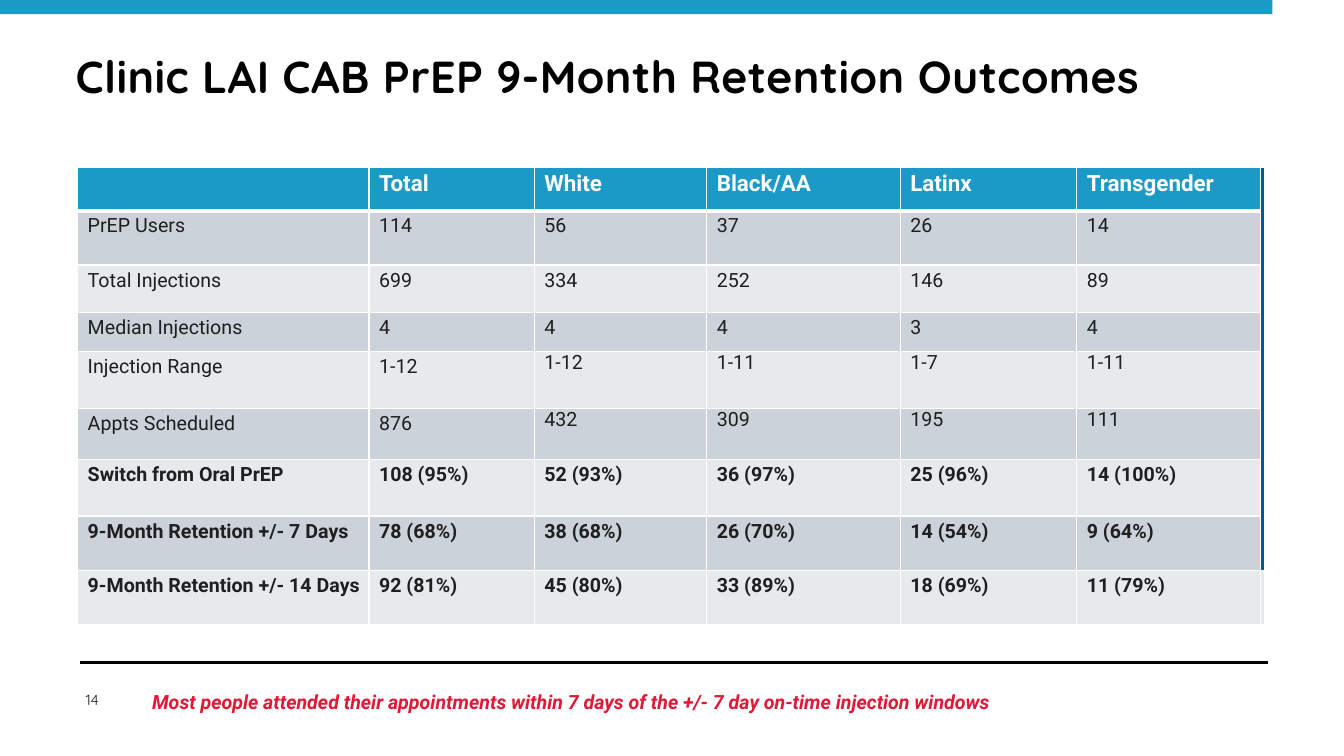
"""Build the nine-month retention outcomes slide."""
from dataclasses import dataclass

from lxml import etree
from pptx import Presentation
from pptx.dml.color import RGBColor
from pptx.enum.shapes import MSO_CONNECTOR, MSO_SHAPE
from pptx.enum.text import MSO_ANCHOR, PP_ALIGN
from pptx.oxml.ns import qn
from pptx.util import Inches, Pt

RECTANGLE = MSO_SHAPE.RECTANGLE
STRAIGHT = MSO_CONNECTOR.STRAIGHT
TOP, MIDDLE = MSO_ANCHOR.TOP, MSO_ANCHOR.MIDDLE
LEFT, CENTER = PP_ALIGN.LEFT, PP_ALIGN.CENTER


@dataclass(frozen=True)
class Theme:
    """Colours, fonts and type sizes of the slide."""

    bar: str = "1A9AC7"
    header: str = "1B9AC7"
    edge: str = "005C84"
    bands: tuple = ("CCD2D9", "E7EAED")
    white: str = "FFFFFF"
    black: str = "000000"
    text: str = "1F1F1F"
    accent: str = "E31836"
    heading_font: str = "Quicksand"
    body_font: str = "Roboto"
    title_size: float = 32
    header_size: float = 16
    body_size: float = 14
    number_size: float = 10.5


THEME = Theme()
COLUMN_WIDTHS = (2.89, 1.64, 1.71, 1.92, 1.75, 1.82, 0.03)
ROW_HEIGHTS = (0.43, 0.54, 0.47, 0.39, 0.56, 0.51, 0.56, 0.54, 0.54)
OUTCOMES = (
    ("", "Total", "White", "Black/AA", "Latinx", "Transgender"),
    ("PrEP Users", "114", "56", "37", "26", "14"),
    ("Total Injections", "699", "334", "252", "146", "89"),
    ("Median Injections", "4", "4", "4", "3", "4"),
    ("Injection Range", "1-12", "1-12", "1-11", "1-7", "1-11"),
    ("Appts Scheduled", "876", "432", "309", "195", "111"),
    ("Switch from Oral PrEP", "108 (95%)", "52 (93%)", "36 (97%)",
     "25 (96%)", "14 (100%)"),
    ("9-Month Retention +/- 7 Days", "78 (68%)", "38 (68%)", "26 (70%)",
     "14 (54%)", "9 (64%)"),
    ("9-Month Retention +/- 14 Days", "92 (81%)", "45 (80%)", "33 (89%)",
     "18 (69%)", "11 (79%)"),
)
RAISED_ROWS = (4, 5)
FIRST_RAISED_COLUMN = 2
FIRST_BOLD_ROW = 6


def set_attributes(target, values):
    """Set each named value on the target."""
    for name, value in values.items():
        setattr(target, name, value)


def set_margins(target, margins):
    """Set left, top, right and bottom margins in inches."""
    sides = ("left", "top", "right", "bottom")
    set_attributes(target, {f"margin_{side}": Inches(margin)
                            for side, margin in zip(sides, margins)})


def write_text(frame, text, size, color, font_name, tracking=0, **formats):
    """Write one formatted run into a text frame."""
    run = frame.paragraphs[0].add_run()
    run.text = text
    set_attributes(run.font, {"size": Pt(size), "name": font_name, **formats})
    run.font.color.rgb = RGBColor.from_string(color)
    if tracking:
        run.font._element.set("spc", str(round(tracking * 100)))


def add_label(slide, box, margins, text, size, color, font_name,
              anchor=TOP, align=LEFT, wrap=True, **formats):
    """Add a text box with one line of text."""
    frame = slide.shapes.add_textbox(*map(Inches, box)).text_frame
    set_margins(frame, margins)
    set_attributes(frame, {"word_wrap": wrap, "vertical_anchor": anchor})
    write_text(frame, text, size, color, font_name, **formats)
    frame.paragraphs[0].alignment = align


def add_bar(slide, box, color):
    """Add a plain filled rectangle."""
    shape = slide.shapes.add_shape(RECTANGLE, *map(Inches, box))
    shape.shadow.inherit = False
    shape.fill.solid()
    shape.fill.fore_color.rgb = RGBColor.from_string(color)
    shape.line.fill.background()


def add_rule(slide, left, right, top, color, width):
    """Add a horizontal line."""
    rule = slide.shapes.add_connector(
        STRAIGHT, Inches(left), Inches(top), Inches(right), Inches(top))
    rule.line.color.rgb = RGBColor.from_string(color)
    rule.line.width = Pt(width)
    etree.SubElement(rule._element.spPr, qn("a:effectLst"))


def style_cell(cell, fill, bottom_width):
    """Give a cell white borders and a solid fill."""
    properties = cell._tc.get_or_add_tcPr()
    widths = {"L": 1, "R": 1, "T": 1, "B": bottom_width}
    for side, width in widths.items():
        border = etree.SubElement(properties, qn(f"a:ln{side}"), w=str(Pt(width)))
        solid = etree.SubElement(border, qn("a:solidFill"))
        etree.SubElement(solid, qn("a:srgbClr"), val=THEME.white)
    cell.fill.solid()
    cell.fill.fore_color.rgb = RGBColor.from_string(fill)


def fill_cell(cell, text, row, column):
    """Style one cell and write its text."""
    is_header = row == 0
    is_raised = row in RAISED_ROWS and column >= FIRST_RAISED_COLUMN
    fill = THEME.header if is_header else THEME.bands[(row - 1) % 2]
    style_cell(cell, fill, 3 if is_header else 1)
    set_margins(cell, (0.1, 0 if is_raised else 0.04, 0, 0))
    if text:
        write_text(cell.text_frame, text,
                   THEME.header_size if is_header else THEME.body_size,
                   THEME.white if is_header else THEME.text,
                   THEME.body_font, bold=is_header or row >= FIRST_BOLD_ROW)


def add_outcomes_table(slide, left, top):
    """Add the outcomes table with its narrow edge column."""
    size = sum(COLUMN_WIDTHS), sum(ROW_HEIGHTS)
    table = slide.shapes.add_table(
        len(ROW_HEIGHTS), len(COLUMN_WIDTHS),
        *map(Inches, (left, top, *size))).table
    table.horz_banding = False
    for column, width in zip(table.columns, COLUMN_WIDTHS):
        column.width = Inches(width)
    for row, height in zip(table.rows, ROW_HEIGHTS):
        row.height = Inches(height)
    for row, values in enumerate(OUTCOMES):
        for column, text in enumerate(values):
            fill_cell(table.cell(row, column), text, row, column)

    last_row, edge = len(ROW_HEIGHTS) - 1, len(COLUMN_WIDTHS) - 1
    table.cell(0, edge).merge(table.cell(last_row - 1, edge))
    for row, fill in ((0, THEME.edge), (last_row, THEME.bands[1])):
        cell = table.cell(row, edge)
        style_cell(cell, fill, 1)
        set_margins(cell, (0, 0, 0, 0))


def main():
    """Build and save the slide."""
    presentation = Presentation()
    presentation.slide_width = Inches(13.33)
    presentation.slide_height = Inches(7.5)
    slide = presentation.slides.add_slide(presentation.slide_layouts[6])

    add_bar(slide, (0, 0, 12.62, 0.14), THEME.bar)
    add_rule(slide, 0.79, 12.58, 6.57, THEME.black, 2)
    add_label(slide, (0.79, 6.81, 0.25, 0.26), (0, 0, 0, 0), "14",
              THEME.number_size, THEME.text, THEME.heading_font,
              anchor=MIDDLE, align=CENTER, wrap=False)
    add_label(slide, (0.75, 0.38, 11.83, 0.81), (0, 0.1, 0, 0),
              "Clinic LAI CAB PrEP 9-Month Retention Outcomes",
              THEME.title_size, THEME.black, THEME.heading_font,
              tracking=0.3, bold=True)
    add_outcomes_table(slide, 0.77, 1.66)
    add_label(slide, (1.41, 6.8, 9.55, 0.34), (0.1, 0.05, 0.1, 0.05),
              "Most people attended their appointments within 7 days of "
              "the +/- 7 day on-time injection windows",
              THEME.body_size, THEME.accent, THEME.body_font,
              bold=True, italic=True)
    presentation.save("out.pptx")


if __name__ == "__main__":
    main()
